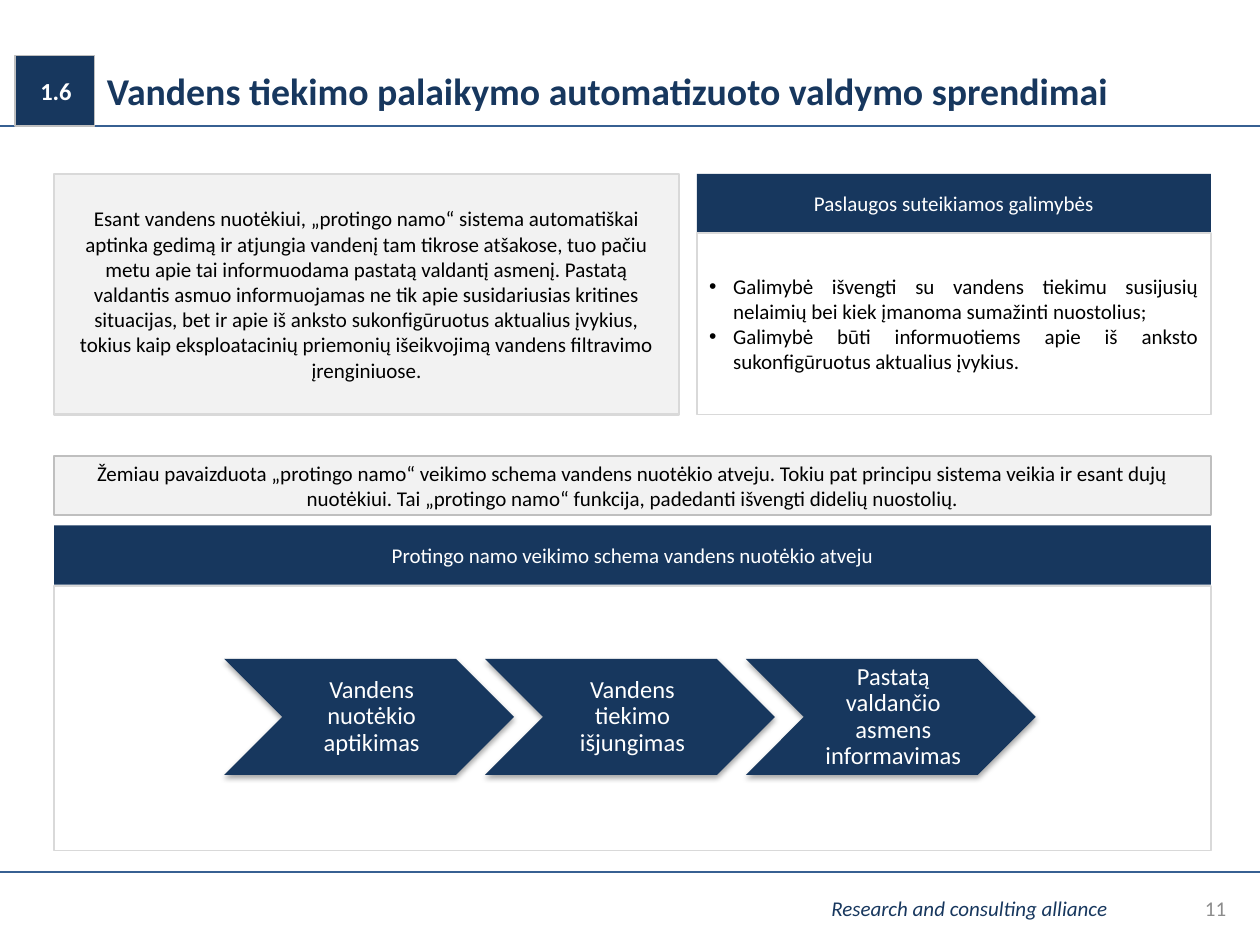
"""Builds the slide on automated water supply control in a smart home."""
from lxml import etree
from pptx import Presentation
from pptx.dml.color import RGBColor
from pptx.enum.shapes import MSO_CONNECTOR, MSO_SHAPE
from pptx.enum.text import MSO_ANCHOR, PP_ALIGN
from pptx.oxml import parse_xml
from pptx.oxml.ns import nsdecls, qn
from pptx.util import Inches, Pt

RECT, CHEVRON = MSO_SHAPE.RECTANGLE, MSO_SHAPE.CHEVRON
LEFT, CENTER, RIGHT, JUSTIFY = PP_ALIGN.LEFT, PP_ALIGN.CENTER, PP_ALIGN.RIGHT, PP_ALIGN.JUSTIFY
MIDDLE = MSO_ANCHOR.MIDDLE
STRAIGHT = MSO_CONNECTOR.STRAIGHT

NAVY = RGBColor(0x17, 0x37, 0x5E)
BLUE = RGBColor(0x37, 0x60, 0x92)
WHITE = RGBColor(0xFF, 0xFF, 0xFF)
BLACK = RGBColor(0, 0, 0)
PALE = RGBColor(0xF2, 0xF2, 0xF2)
LIGHT = RGBColor(0xD9, 0xD9, 0xD9)
SILVER = RGBColor(0xBF, 0xBF, 0xBF)
GRAY = RGBColor(0x8C, 0x8C, 0x8C)

SHADOW = f"""<a:effectLst {nsdecls('a')}>
<a:outerShdw blurRad="40000" dist="23000" dir="5400000" rotWithShape="0">
<a:srgbClr val="000000"><a:alpha val="35000"/></a:srgbClr>
</a:outerShdw></a:effectLst>"""

prs = Presentation()
prs.slide_width, prs.slide_height = Inches(10), Inches(7.5)
s = prs.slides.add_slide(prs.slide_layouts[6])


def add_box(box, fill, line=None, width=1, shape=RECT):
    sp = s.shapes.add_shape(shape, *map(Inches, box))
    sp.shadow.inherit = False
    sp.fill.solid()
    sp.fill.fore_color.rgb = fill
    if line is None:
        sp.line.fill.background()
    else:
        sp.line.color.rgb = line
        sp.line.width = Pt(width)
    return sp


def add_text(sp, lines, color, size=12, align=CENTER, bold=False, italic=False,
             bullet=False, insets=(0.1, 0.05, 0.1, 0.05), spacing=None):
    tf = sp.text_frame
    tf.word_wrap = True
    tf.vertical_anchor = MIDDLE
    tf.margin_left, tf.margin_top, tf.margin_right, tf.margin_bottom = map(Inches, insets)
    for i, line in enumerate(lines):
        p = tf.add_paragraph() if i else tf.paragraphs[0]
        p.alignment = align
        if spacing:
            p.line_spacing = spacing
        if bullet:
            pPr = p._p.get_or_add_pPr()
            pPr.set("marL", str(Inches(0.19)))
            pPr.set("indent", str(Inches(-0.19)))
            etree.SubElement(pPr, qn("a:buFont")).set("typeface", "Arial")
            etree.SubElement(pPr, qn("a:buChar")).set("char", "•")
        r = p.add_run()
        r.text = line
        r.font.name = "Calibri"
        r.font.size = Pt(size)
        r.font.bold = bold
        r.font.italic = italic
        r.font.color.rgb = color


for y in (1, 6.92):
    rule = s.shapes.add_connector(STRAIGHT, 0, Inches(y), Inches(10), Inches(y))
    rule.line.color.rgb = BLUE
    rule.line.width = Pt(1)
    etree.SubElement(rule._element.spPr, qn("a:effectLst"))

for box, text, color, style in (
    ((6.5, 7.06, 3.46, 0.29), "Research and consulting alliance", NAVY,
     dict(align=LEFT, italic=True)),
    ((7.5, 7.01, 2.33, 0.4), "11", GRAY, dict(align=RIGHT)),
    ((0.75, 0.45, 8.64, 0.53), "Vandens tiekimo palaikymo automatizuoto valdymo sprendimai",
     NAVY, dict(size=21.6, align=LEFT, bold=True)),
):
    add_text(s.shapes.add_textbox(*map(Inches, box)), [text], color, **style)

number = add_box((0.12, 0.44, 0.63, 0.56), NAVY, SILVER)
add_text(number, ["1.6"], WHITE, 14, LEFT, bold=True, insets=(0.2, 0.05, 0.1, 0.05))

for box, title in (
    ((5.53, 1.38, 4.08, 0.47), "Paslaugos suteikiamos galimybės"),
    ((0.43, 4.17, 9.18, 0.47), "Protingo namo veikimo schema vandens nuotėkio atveju"),
):
    add_text(add_box(box, NAVY), [title], WHITE)

intro = add_box((0.43, 1.38, 4.96, 1.91), PALE, LIGHT, 1.5)
add_text(intro, [
    "Esant vandens nuotėkiui, „protingo namo“ sistema automatiškai aptinka gedimą ir "
    "atjungia vandenį tam tikrose atšakose, tuo pačiu metu apie tai informuodama pastatą "
    "valdantį asmenį. Pastatą valdantis asmuo informuojamas ne tik apie susidariusias "
    "kritines situacijas, bet ir apie iš anksto sukonfigūruotus aktualius įvykius, tokius "
    "kaip eksploatacinių priemonių išeikvojimą vandens filtravimo įrenginiuose."], BLACK)

benefits = add_box((5.53, 1.85, 4.08, 1.44), WHITE, LIGHT)
add_text(benefits, [
    "Galimybė išvengti su vandens tiekimu susijusių nelaimių bei kiek įmanoma sumažinti "
    "nuostolius;",
    "Galimybė būti informuotiems apie iš anksto sukonfigūruotus aktualius įvykius.",
], BLACK, align=JUSTIFY, bullet=True)

scheme_note = add_box((0.43, 3.62, 9.18, 0.47), PALE, SILVER)
add_text(scheme_note, [
    "Žemiau pavaizduota „protingo namo“ veikimo schema vandens nuotėkio atveju. Tokiu pat "
    "principu sistema veikia ir esant dujų nuotėkiui. Tai „protingo namo“ funkcija, "
    "padedanti išvengti didelių nuostolių."], BLACK)

add_box((0.43, 4.65, 9.18, 2.1), WHITE, LIGHT)

steps = ("Vandens nuotėkio aptikimas", "Vandens tiekimo išjungimas",
         "Pastatą valdančio asmens informavimas")
for i, step in enumerate(steps):
    x = 1.78 + 2.07 * i
    sp = add_box((x, 5.23, 2.3, 0.92), NAVY, shape=CHEVRON)
    spPr = sp._element.spPr
    spPr.replace(spPr.find(qn("a:effectLst")), parse_xml(SHADOW))
    label = s.shapes.add_textbox(Inches(x + 0.46), Inches(5.23), Inches(1.38), Inches(0.92))
    add_text(label, [step], WHITE, 14, insets=(0.06, 0.02, 0.02, 0.02), spacing=0.9)

prs.save("out.pptx")
